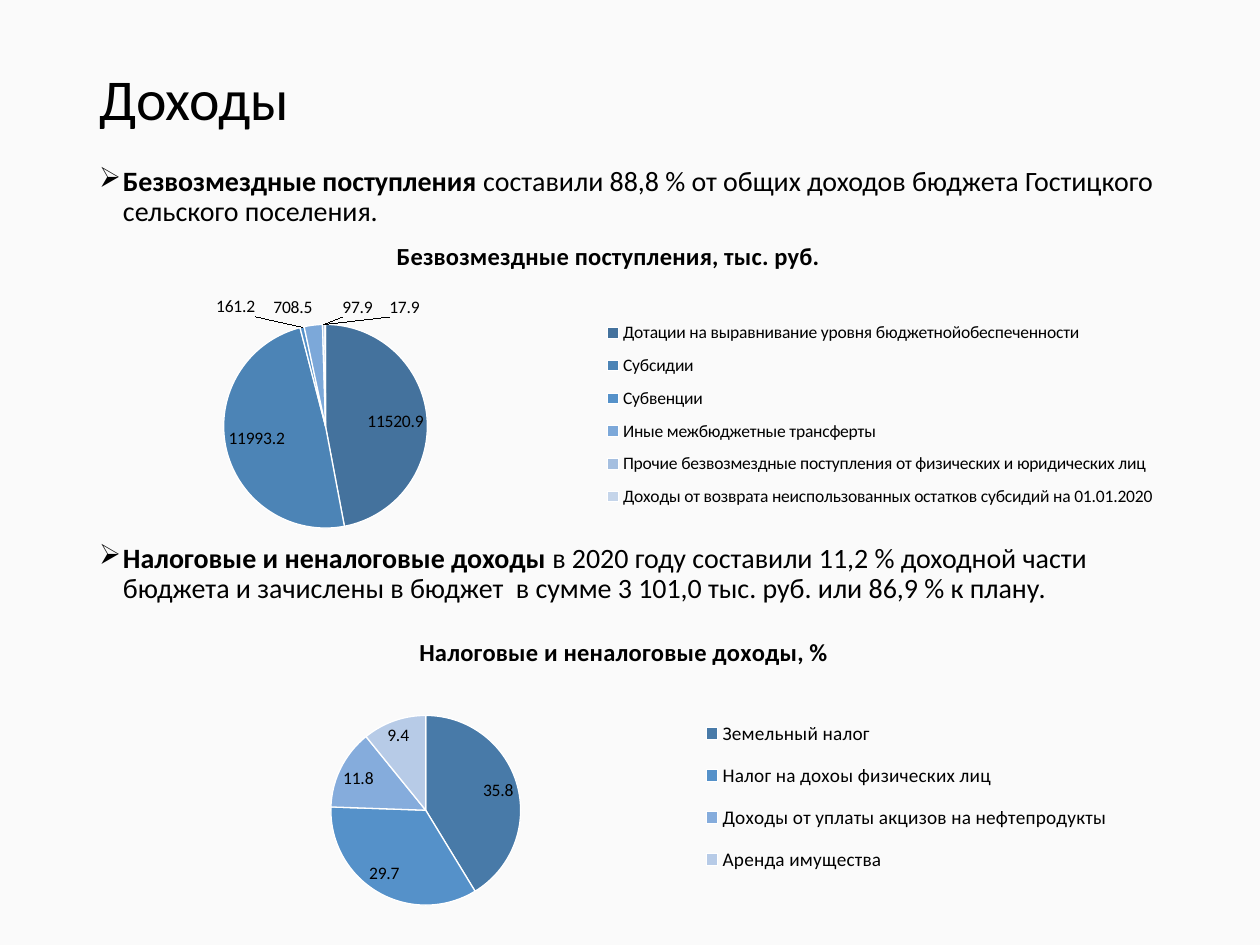
import pptx
import pptx.chart.data
import pptx.dml.color
import pptx.enum.chart
import pptx.enum.text
import pptx.oxml
import pptx.oxml.ns
import pptx.util
from dataclasses import dataclass

Cm = pptx.util.Cm
Pt = pptx.util.Pt


@dataclass(frozen=True)
class Theme:
    font: str = "Calibri"
    background: str = "FAFAFA"
    text: str = "000000"
    slice_edge: str = "FFFFFF"
    title_size: float = 33
    body_size: float = 16
    chart_title_size: float = 14
    label_size: float = 10


theme = Theme()


def style_font(font, size, bold=False):
    font.name = theme.font
    font.size = Pt(size)
    font.bold = bold
    font.color.rgb = pptx.dml.color.RGBColor.from_string(theme.text)


def layout_xml(inner=False, edges=True, **values):
    """Manual chart layout, in fractions of the chart area."""
    parts = ['<c:layoutTarget val="inner"/>'] if inner else []
    if edges:
        parts += ['<c:xMode val="edge"/>', '<c:yMode val="edge"/>']
    parts += [f'<c:{name} val="{value}"/>' for name, value in values.items()]
    return pptx.oxml.parse_xml(
        f'<c:layout {pptx.oxml.ns.nsdecls("c")}><c:manualLayout>'
        f'{"".join(parts)}</c:manualLayout></c:layout>')


deck = pptx.Presentation()
deck.slide_width = Cm(25.4)
deck.slide_height = Cm(19.05)
page = deck.slides.add_slide(deck.slide_layouts[5])
page.background.fill.solid()
page.background.fill.fore_color.rgb = pptx.dml.color.RGBColor.from_string(theme.background)

# Title
title = page.shapes.title
title.left, title.top, title.width, title.height = Cm(1.75), Cm(1.02), Cm(21.9), Cm(2.06)
title.text_frame.text = "Доходы"
title.text_frame.vertical_anchor = pptx.enum.text.MSO_ANCHOR.MIDDLE
paragraph = title.text_frame.paragraphs[0]
paragraph.alignment = pptx.enum.text.PP_ALIGN.LEFT
paragraph.line_spacing = 0.9
style_font(paragraph.runs[0].font, theme.title_size)

# Two bullets, with room for the first chart between them
bullets = [
    ("Безвозмездные поступления",
     " составили 88,8 % от общих доходов бюджета Гостицкого сельского поселения.", 0),
    ("Налоговые и неналоговые доходы",
     " в 2020 году составили 11,2 % доходной части бюджета и зачислены в бюджет"
     "  в сумме 3 101,0 тыс. руб. или 86,9 % к плану.", 180.7),
]
body = page.shapes.add_textbox(Cm(1.75), Cm(3.25), Cm(21.9), Cm(13.92))
frame = body.text_frame
frame.word_wrap = True
for number, (lead, rest, gap) in enumerate(bullets):
    paragraph = frame.add_paragraph() if number else frame.paragraphs[0]
    properties = paragraph._p.get_or_add_pPr()
    properties.set("marL", str(Cm(0.48)))
    properties.set("indent", str(-Cm(0.48)))
    properties.append(pptx.oxml.parse_xml(
        f'<a:buChar {pptx.oxml.ns.nsdecls("a")} char="➢"/>'))
    paragraph.line_spacing = 0.9
    paragraph.space_before = Pt(gap)
    for text, bold in ((lead, True), (rest, False)):
        span = paragraph.add_run()
        span.text = text
        style_font(span.font, theme.body_size, bold)

# Pie charts: slices are (category, value, colour); shifts move single labels
pies = [
    dict(
        title="Безвозмездные поступления, тыс. руб.",
        left=0.86, top=4.47, height=6.6, legend_size=10,
        slices=[
            ("Дотации на выравнивание уровня бюджетнойобеспеченности", 11520.9, "44729D"),
            ("Субсидии", 11993.2, "4C84B6"),
            ("Субвенции", 161.2, "5591C9"),
            ("Иные межбюджетные трансферты", 708.5, "7CA8D9"),
            ("Прочие безвозмездные поступления от физических и юридических лиц", 97.9, "A5BFE0"),
            ("Доходы от возврата неиспользованных остатков субсидий на 01.01.2020", 17.9, "C5D5EA"),
        ],
        plot=dict(x=0.16, y=0.31, w=0.18, h=0.63),
        legend=dict(x=0.49, y=0.27, w=0.5, h=0.64),
        shifts={2: (-0.04, -0.01), 4: (0.03, 0), 5: (0.07, 0)},
    ),
    dict(
        title="Налоговые и неналоговые доходы, %",
        left=1.17, top=12.45, height=6.17, legend_size=11,
        slices=[
            ("Земельный налог", 35.8, "487AA8"),
            ("Налог на дохоы физических лиц", 29.7, "5591C9"),
            ("Доходы от уплаты акцизов на нефтепродукты", 11.8, "85ACDC"),
            ("Аренда имущества", 9.4, "B7CBE7"),
        ],
        plot=dict(x=0.24, y=0.32, w=0.17, h=0.62),
        legend=dict(x=0.55, y=0.28, w=0.4, h=0.61),
        shifts={},
    ),
]
best_fit = pptx.enum.chart.XL_LABEL_POSITION.BEST_FIT
for pie in pies:
    names, values, colours = zip(*pie["slices"])
    data = pptx.chart.data.CategoryChartData()
    data.categories = names
    data.add_series(pie["title"], values)
    chart = page.shapes.add_chart(
        pptx.enum.chart.XL_CHART_TYPE.PIE, Cm(pie["left"]), Cm(pie["top"]),
        Cm(22.81), Cm(pie["height"]), data).chart
    style_font(chart.font, 18)

    # Chart title and legend
    chart.has_title = True
    heading = chart.chart_title.text_frame
    heading.text = pie["title"]
    style_font(heading.paragraphs[0].runs[0].font, theme.chart_title_size, True)
    chart.has_legend = True
    legend = chart.legend
    legend.position = pptx.enum.chart.XL_LEGEND_POSITION.RIGHT
    legend.include_in_layout = False
    style_font(legend.font, pie["legend_size"])

    # Places of the pie and the legend
    root = chart._chartSpace
    for tag, element in (("plotArea", layout_xml(inner=True, **pie["plot"])),
                         ("legend", layout_xml(**pie["legend"]))):
        parent = root.xpath(f".//c:{tag}")[0]
        for old in parent.xpath("./c:layout"):
            parent.remove(old)
        parent.insert(0 if tag == "plotArea" else 1, element)

    # Slices and value labels
    plot = chart.plots[0]
    plot.vary_by_categories = True
    series = plot.series[0]
    for number, colour in enumerate(colours):
        style = series.points[number].format
        style.fill.solid()
        style.fill.fore_color.rgb = pptx.dml.color.RGBColor.from_string(colour)
        style.line.color.rgb = pptx.dml.color.RGBColor.from_string(theme.slice_edge)
        style.line.width = Pt(0.75)
    labels = series.data_labels
    labels.show_value = True
    labels.show_percentage = False
    labels.position = best_fit
    style_font(labels.font, theme.label_size)
    for number, (across, down) in pie["shifts"].items():
        label = series.points[number].data_label
        label.position = best_fit
        style_font(label.font, theme.label_size)
        element = root.xpath(f'.//c:dLbl[c:idx/@val="{number}"]')[0]
        element.insert(1, layout_xml(edges=False, x=across, y=down))

deck.save("out.pptx")
